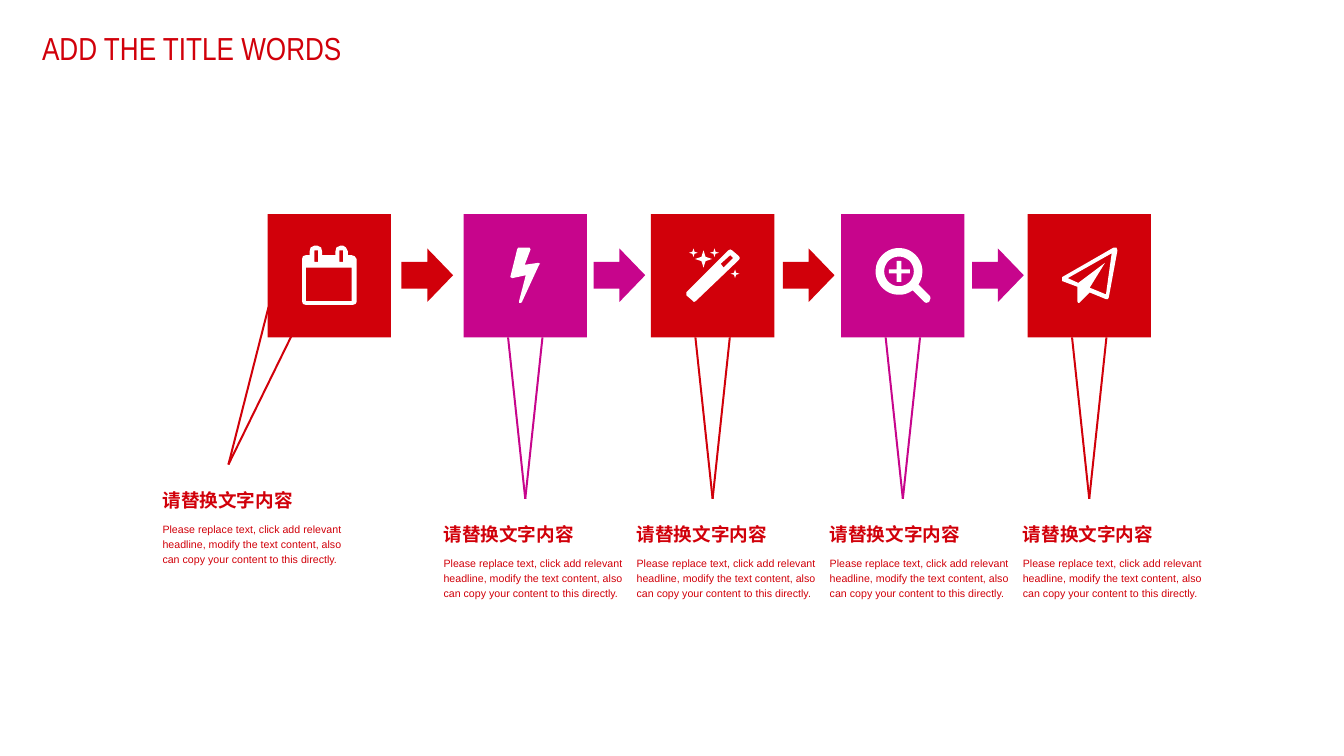
"""Build a five-step process slide with icon squares, arrows and captions."""
import math
import itertools

import pptx
import pptx.util
import pptx.dml.color
import pptx.enum.shapes
import pptx.enum.text
import pptx.oxml

Inches = pptx.util.Inches
Pt = pptx.util.Pt
ANCHOR = pptx.enum.text.MSO_ANCHOR
SHAPE = pptx.enum.shapes.MSO_SHAPE
RED = pptx.dml.color.RGBColor(0xD1, 0x00, 0x0A)
MAGENTA = pptx.dml.color.RGBColor(0xC7, 0x05, 0x8C)
WHITE = pptx.dml.color.RGBColor(0xFF, 0xFF, 0xFF)

SQUARE_TOP = 2.24
SQUARE_SIDE = 1.29
HEADING = "请替换文字内容"
DETAIL = ("Please replace text, click add relevant headline, modify the text "
          "content, also can copy your content to this directly.")


def polar(x, y, radii, angles):
    return [(x + r * math.cos(math.radians(a)), y + r * math.sin(math.radians(a)))
            for a, r in zip(angles, itertools.cycle(radii))]


def write(frame, text, margins, anchor, spacing, font_format):
    frame.word_wrap = True
    frame.auto_size = pptx.enum.text.MSO_AUTO_SIZE.NONE
    frame.vertical_anchor = anchor
    frame.margin_left = frame.margin_right = Inches(margins[0])
    frame.margin_top = frame.margin_bottom = Inches(margins[1])
    frame.text = text
    paragraph = frame.paragraphs[0]
    paragraph.alignment = pptx.enum.text.PP_ALIGN.LEFT
    paragraph.line_spacing = spacing
    font = paragraph.runs[0].font
    font.color.rgb = RED
    for attribute, value in font_format.items():
        setattr(font, attribute, value)


calendar = [
    [(93, 92), (92, 94), (89, 95), (40, 95), (37, 94), (36, 91), (36, 47),
     (37, 44), (40, 43), (44, 43), (44, 39), (45, 35), (49, 33), (52, 33),
     (56, 35), (57, 39), (57, 43), (71, 43), (71, 39), (72, 35), (76, 33),
     (79, 33), (82, 35), (84, 39), (84, 43), (88, 43), (91, 44), (93, 47)],
    [(40, 56), (88, 56), (88, 91), (40, 91)],
    [(49, 38), (53, 38), (53, 50), (49, 50)],
    [(75, 38), (79, 38), (79, 50), (75, 50)],
]
bolt = [
    [(79, 53), (61, 92), (60, 93), (58, 93), (58, 91), (65, 64), (51, 67),
     (49, 66), (49, 65), (56, 37), (57, 35), (69, 35), (70, 37), (64, 53),
     (78, 51), (80, 52)],
]
wand = [
    [(92, 48), (47, 91), (45, 92), (44, 91), (37, 85), (37, 82), (81, 38),
     (83, 37), (85, 38), (92, 44), (93, 46)],
    [(86, 46), (83, 43), (73, 52), (76, 56)],
]
for x, y, reach in [(44.5, 40.5, 4.5), (55, 47, 9), (66.5, 40.5, 4.5), (88, 62.5, 4.5)]:
    wand.append(polar(x, y, (reach, reach * 0.35), range(0, 360, 45)))
magnifier = [
    polar(60.5, 60, (24.5,), range(54, 395, 10))
    + [(93, 86), (93.5, 88), (92, 92), (89, 93), (87, 92)],
    polar(60.5, 60, (15.5,), range(0, 360, 10)),
    [(72, 58), (72, 62), (63, 62), (63, 71), (58, 71), (58, 62), (50, 62),
     (50, 58), (58, 58), (58, 49), (63, 49), (63, 58)],
]
plane = [
    [(94, 38), (85, 87), (84, 89), (82, 89), (65, 82), (55, 92), (54, 93),
     (53, 93), (52, 91), (52, 76), (36, 70), (36, 66), (90, 35), (93, 35)],
    [(88, 41), (42, 67), (53, 72), (81, 51), (65, 77), (82, 84)],
]

steps = [
    (2.80, RED, calendar, (2.39, 4.86), [(2.81, 3.21), (3.14, 3.33)]),
]
for left, accent, icon in [(4.85, MAGENTA, bolt), (6.81, RED, wand),
                           (8.80, MAGENTA, magnifier), (10.75, RED, plane)]:
    middle = left + SQUARE_SIDE / 2
    base = SQUARE_TOP + SQUARE_SIDE
    steps.append((left, accent, icon, (middle, 5.22),
                  [(middle - 0.18, base), (middle + 0.18, base)]))

deck = pptx.Presentation()
deck.slide_width = Inches(14.06)
deck.slide_height = Inches(7.91)
slide = deck.slides.add_slide(deck.slide_layouts[5])
shapes = slide.shapes

title = shapes.title
title.left, title.top, title.width, title.height = map(Inches, (0.34, 0.05, 3.54, 0.63))
write(title.text_frame, "ADD THE TITLE WORDS", (0.1, 0.05), ANCHOR.TOP, 1.5,
      {"name": "Arial Narrow", "size": Pt(24)})

for left, accent, icon, tip, roots in steps:
    for root in roots:
        pointer = shapes.add_connector(pptx.enum.shapes.MSO_CONNECTOR.STRAIGHT,
                                       *map(Inches, tip + root))
        pointer.line.color.rgb = accent
        pointer.line.width = Pt(1.5)
        pointer._element.spPr.append(pptx.oxml.parse_xml(
            '<a:effectLst xmlns:a="http://schemas.openxmlformats.org/drawingml/2006/main"/>'))

    square = shapes.add_shape(SHAPE.RECTANGLE, Inches(left), Inches(SQUARE_TOP),
                              Inches(SQUARE_SIDE), Inches(SQUARE_SIDE))
    outlines = [[(x * 10, y * 10) for x, y in outline] for outline in icon]
    pen = shapes.build_freeform(*outlines[0][0], scale=Inches(1) / 1000)
    for outline in outlines:
        pen.move_to(*outline[0])
        pen.add_line_segments(outline[1:], close=True)
    symbol = pen.convert_to_shape(Inches(left), Inches(SQUARE_TOP))
    for part, colour in [(square, accent), (symbol, WHITE)]:
        part.shadow.inherit = False
        part.fill.solid()
        part.fill.fore_color.rgb = colour
        part.line.fill.background()

for left, accent in zip((4.20, 6.21, 8.19, 10.17), itertools.cycle((RED, MAGENTA))):
    arrow = shapes.add_shape(SHAPE.RIGHT_ARROW, Inches(left), Inches(2.6),
                             Inches(0.54), Inches(0.56))
    arrow.shadow.inherit = False
    arrow.fill.solid()
    arrow.fill.fore_color.rgb = accent
    arrow.line.fill.background()

captions = [(1.7, 5.02)] + [(4.64 + 2.02 * column, 5.38) for column in range(4)]
for left, top in captions:
    heading = shapes.add_textbox(Inches(left), Inches(top), Inches(1.46), Inches(0.37))
    write(heading.text_frame, HEADING, (0, 0.11), ANCHOR.MIDDLE, 1.2,
          {"name": "Arial", "size": Pt(14), "bold": True})
    detail = shapes.add_textbox(Inches(left), Inches(top + 0.42), Inches(1.92), Inches(0.47))
    write(detail.text_frame, DETAIL, (0, 0), ANCHOR.TOP, 1.2,
          {"name": "Arial", "size": Pt(8)})

deck.save("out.pptx")
